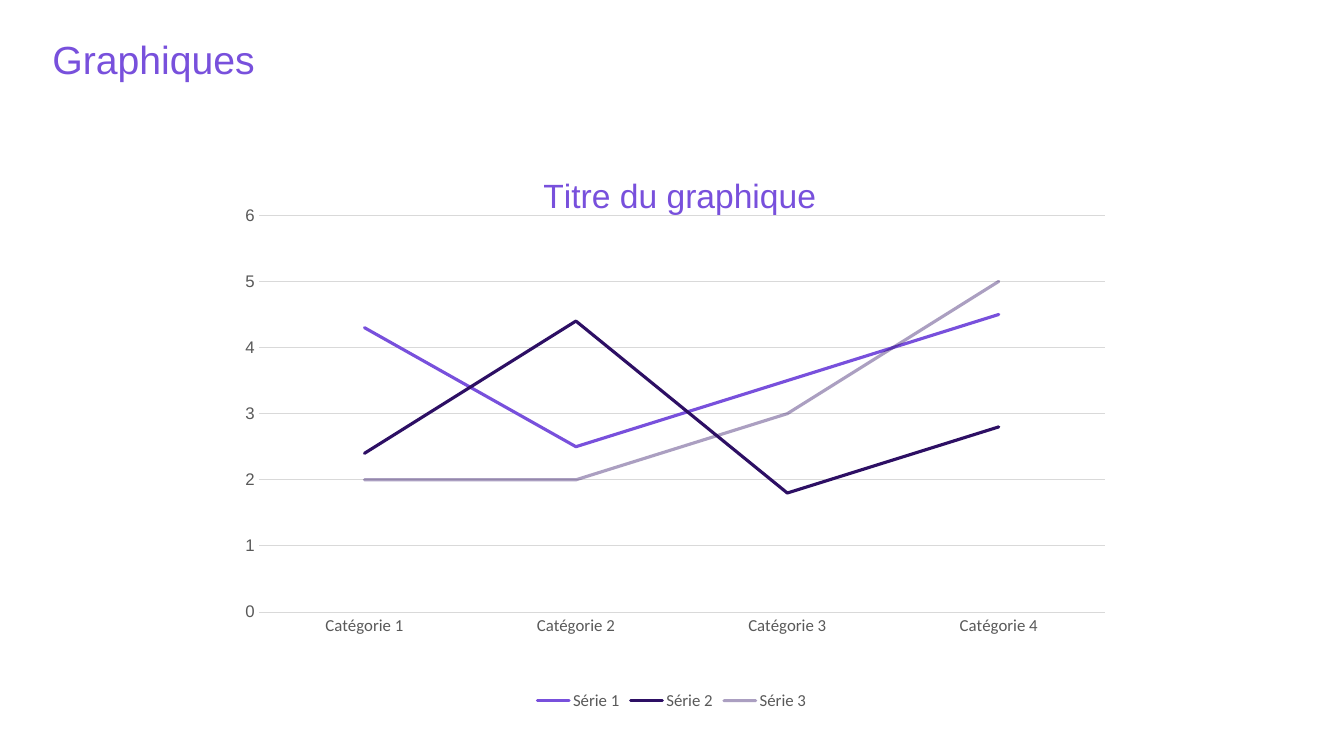
from lxml import etree
from pptx import Presentation
from pptx.chart.data import CategoryChartData
from pptx.dml.color import RGBColor
from pptx.enum import chart as charts, text
from pptx.oxml import parse_xml
from pptx.oxml.ns import nsdecls, qn
from pptx.util import Cm, Pt

VIOLET, INDIGO, GREY, PALE = "7850DC", "2D0F64", "595959", "D9D9D9"
CATEGORIES = ["Catégorie 1", "Catégorie 2", "Catégorie 3", "Catégorie 4"]
# name, values, colour, opacity in percent
SERIES = [
    ("Série 1", (4.3, 2.5, 3.5, 4.5), VIOLET, 100),
    ("Série 2", (2.4, 4.4, 1.8, 2.8), INDIGO, 100),
    ("Série 3", (2, 2, 3, 5), INDIGO, 40),
]


def colour(value):
    return RGBColor.from_string(value)


def style_font(font, name, size, value):
    font.name = name
    font.size = Pt(size)
    font.bold = False
    font.color.rgb = colour(value)


def style_line(line, value, width):
    line.color.rgb = colour(value)
    line.width = Pt(width)


def place(parent, index, **settings):
    """Give a chart part a manual layout, as fractions of the chart."""
    for old in parent.findall(qn("c:layout")):
        parent.remove(old)
    items = "".join(f'<c:{key} val="{val}"/>' for key, val in settings.items())
    parent.insert(index, parse_xml(
        f'<c:layout {nsdecls("c")}><c:manualLayout>{items}</c:manualLayout></c:layout>'))


def add_heading(slide, words):
    heading = slide.shapes.title
    heading.left, heading.top = Cm(1.32), Cm(1.02)
    heading.width, heading.height = Cm(27.18), Cm(1.07)
    frame = heading.text_frame
    frame.text = words
    frame.margin_left = frame.margin_right = 0
    frame.margin_top = frame.margin_bottom = 0
    frame.vertical_anchor = text.MSO_ANCHOR.MIDDLE
    frame.auto_size = text.MSO_AUTO_SIZE.NONE
    paragraph = frame.paragraphs[0]
    paragraph.alignment = text.PP_ALIGN.LEFT
    paragraph.line_spacing = 0.9
    style_font(paragraph.runs[0].font, "Arial", 28, VIOLET)


def style_axes(chart):
    for axis, font in ((chart.category_axis, "Calibri"), (chart.value_axis, "Arial")):
        axis.major_tick_mark = axis.minor_tick_mark = charts.XL_TICK_MARK.NONE
        style_font(axis.tick_labels.font, font, 12, GREY)
    style_line(chart.category_axis.format.line, PALE, 0.75)
    scale = chart.value_axis
    scale.minimum_scale, scale.maximum_scale, scale.major_unit = 0, 6, 1
    scale.format.line.fill.background()
    scale.has_major_gridlines = True
    style_line(scale.major_gridlines.format.line, PALE, 0.75)


def style_series(series, value, opacity):
    series.smooth = False
    series.marker.style = charts.XL_MARKER_STYLE.NONE
    line = series.format.line
    style_line(line, value, 2.25)
    outline = series.format.line._get_or_add_ln()
    outline.set("cap", "rnd")
    if opacity < 100:
        tint = outline.find(".//" + qn("a:srgbClr"))
        etree.SubElement(tint, qn("a:alpha")).set("val", str(opacity * 1000))


def add_line_chart(slide, title):
    data = CategoryChartData()
    data.categories = CATEGORIES
    for name, values, _, _ in SERIES:
        data.add_series(name, values)
    chart = slide.shapes.add_chart(
        charts.XL_CHART_TYPE.LINE, Cm(5.64), Cm(3.66), Cm(22.58), Cm(14.35), data).chart
    style_font(chart.font, "Calibri", 10, "000000")

    chart.has_title = True
    chart.chart_title.text_frame.text = title
    run = chart.chart_title.text_frame.paragraphs[0].runs[0]
    style_font(run.font, "Arial", 24, VIOLET)
    place(chart.chart_title._element, 1, xMode="edge", yMode="edge", x=0.35, y=0.04)

    chart.has_legend = True
    chart.legend.position = charts.XL_LEGEND_POSITION.BOTTOM
    chart.legend.include_in_layout = False
    style_font(chart.legend.font, "Calibri", 12, GREY)

    style_axes(chart)
    chart.plots[0].vary_by_categories = False
    for series, (_, _, value, opacity) in zip(chart.plots[0].series, SERIES):
        style_series(series, value, opacity)
    plot_area = chart._chartSpace.find(".//" + qn("c:plotArea"))
    place(plot_area, 0, layoutTarget="inner", xMode="edge", yMode="edge",
          x=0.039, y=0.123, w=0.944, h=0.697)


def main():
    deck = Presentation()
    deck.slide_width, deck.slide_height = Cm(33.87), Cm(19.05)
    slide = deck.slides.add_slide(deck.slide_layouts[5])
    add_heading(slide, "Graphiques")
    add_line_chart(slide, "Titre du graphique")
    deck.save("out.pptx")


if __name__ == "__main__":
    main()
